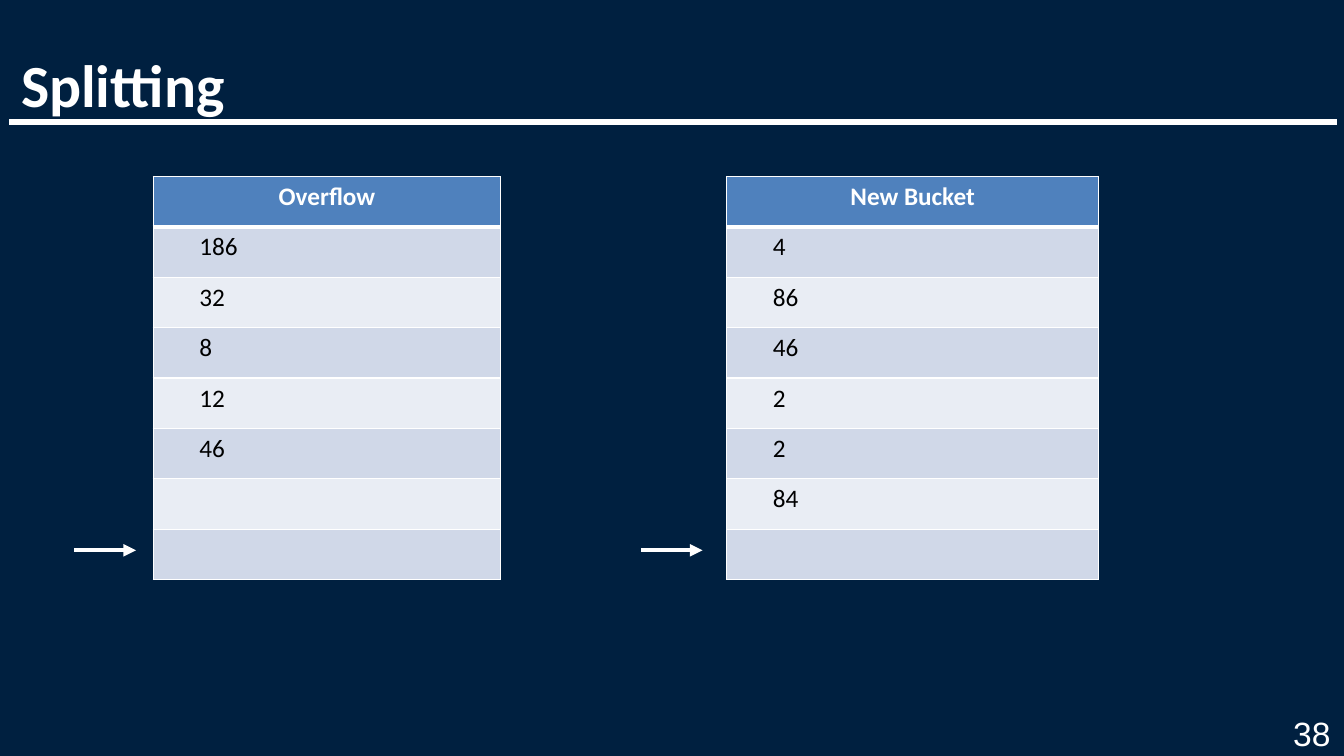
from lxml import etree
from pptx import Presentation
from pptx.dml.color import RGBColor
from pptx.enum.shapes import MSO_CONNECTOR
from pptx.enum.text import MSO_ANCHOR, PP_ALIGN
from pptx.oxml.ns import qn
from pptx.util import Pt

LINE = MSO_CONNECTOR.STRAIGHT
BOTTOM, TOP = MSO_ANCHOR.BOTTOM, MSO_ANCHOR.TOP
LEFT, MID, RIGHT = PP_ALIGN.LEFT, PP_ALIGN.CENTER, PP_ALIGN.RIGHT
HUES = {"navy": "002040", "white": "FFFFFF", "black": "000000",
        "head": "4F81BD", "odd": "D0D8E8", "even": "E9EDF4"}
ROW = 36


def hue(name):
    """Return the named colour."""
    return RGBColor.from_string(HUES[name])


def write(para, text, size, face, tint, bold=False, align=LEFT):
    """Add one styled run to a paragraph."""
    para.alignment = align
    run = para.add_run()
    run.text = text
    font = run.font
    font.size, font.name, font.bold = Pt(size), face, bold
    font.color.rgb = hue(tint)


def rule(slide, x, y, width, weight, arrow=False):
    """Draw a level white line, with an arrowhead on request."""
    line = slide.shapes.add_connector(LINE, Pt(x), Pt(y), Pt(x + width), Pt(y))
    line.line.color.rgb = hue("white")
    line.line.width = Pt(weight)
    if arrow:
        etree.SubElement(line.line._get_or_add_ln(), qn("a:tailEnd"), type="triangle")
    etree.SubElement(line._element.spPr, qn("a:effectLst"))


def label(slide, box, anchor, pad=0):
    """Add an empty text box and return its first paragraph."""
    frame = slide.shapes.add_textbox(*map(Pt, box)).text_frame
    frame.word_wrap = True
    frame.vertical_anchor = anchor
    frame.margin_left = frame.margin_right = Pt(pad)
    frame.margin_top = frame.margin_bottom = 0
    return frame.paragraphs[0]


def header(slide, box):
    """Place the title above its rule."""
    x, y, width, height = box
    para = label(slide, box, BOTTOM, 7.2)
    para.line_spacing = 0.89
    write(para, "Splitting", 42.7, "Calibri", "white", True)
    rule(slide, x - 1.5, y + height + 1.4, width + 4.2, 3.75)


def footer(slide, box):
    """Place the page number."""
    write(label(slide, box, TOP), "38", 24, "Arial", "white", align=RIGHT)


def edge(cell, top, bottom):
    """Border a cell in white, with the given top and bottom weights."""
    props = cell._tc.get_or_add_tcPr()
    for side, weight in zip("LRTB", (1, 1, top, bottom)):
        line = etree.SubElement(props, qn("a:ln" + side), w=str(Pt(weight)))
        fill = etree.SubElement(line, qn("a:solidFill"))
        etree.SubElement(fill, qn("a:srgbClr"), val=HUES["white"])


def bucket(slide, box, name, keys, gap):
    """Place a bucket table and the arrow to its last row."""
    x, y, width, height = box
    count = round(height / ROW)
    table = slide.shapes.add_table(count, 1, *map(Pt, box)).table
    table.columns[0].width = Pt(width)
    for i in range(count):
        table.rows[i].height = Pt(ROW)
        cell = table.cell(i, 0)
        cell.margin_left = cell.margin_right = Pt(33)
        edge(cell, 3 if i == 1 else 1, 3 if i == 0 else 1)
        cell.fill.solid()
        shade = "head" if i == 0 else "odd" if i % 2 else "even"
        cell.fill.fore_color.rgb = hue(shade)
        para = cell.text_frame.paragraphs[0]
        if i == 0:
            write(para, name, 18, "Calibri", "white", True, MID)
        elif i <= len(keys):
            write(para, str(keys[i - 1]), 18, "Calibri", "black")
    rule(slide, x - gap, y + height - 20.9, 44, 3, True)


def main():
    """Build and save the slide."""
    deck = Presentation()
    deck.slide_width, deck.slide_height = Pt(960), Pt(540)
    slide = deck.slides.add_slide(deck.slide_layouts[6])
    slide.background.fill.solid()
    slide.background.fill.fore_color.rgb = hue("navy")
    header(slide, (8, 0, 944, 85.7))
    bucket(slide, (519.1, 126, 265.7, 288), "New Bucket",
           (4, 86, 46, 2, 2, 84), 61.2)
    bucket(slide, (109.4, 126, 248.4, 288), "Overflow",
           (186, 32, 8, 12, 46), 56.2)
    footer(slide, (918.7, 509, 31.7, 20.2))
    deck.save("out.pptx")


if __name__ == "__main__":
    main()
